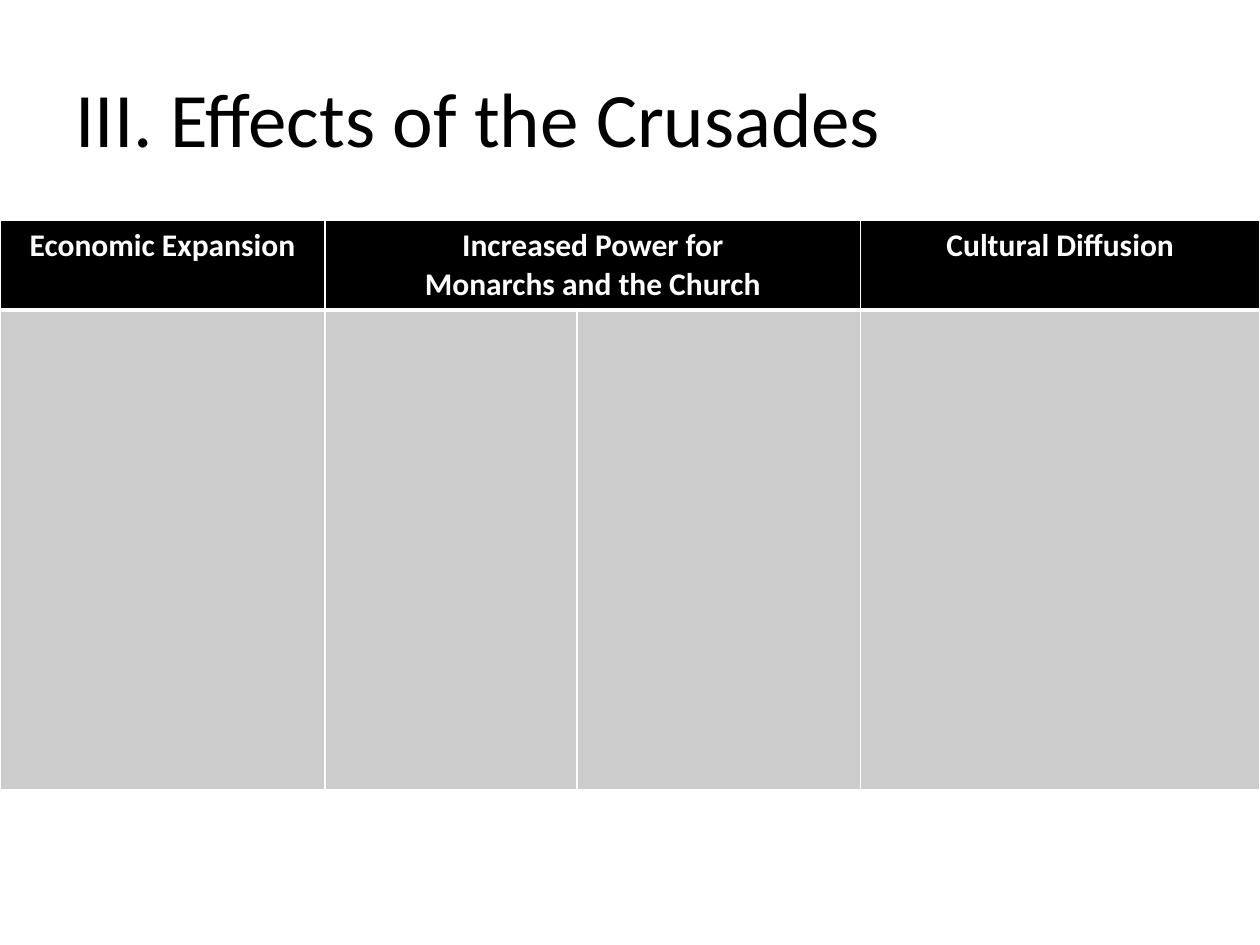
from lxml import etree
from pptx import Presentation
from pptx.dml.color import RGBColor
from pptx.enum.text import MSO_ANCHOR, PP_ALIGN
from pptx.oxml.ns import qn
from pptx.util import Inches, Pt

LEFT, CENTER = PP_ALIGN.LEFT, PP_ALIGN.CENTER
MIDDLE = MSO_ANCHOR.MIDDLE

BLACK = RGBColor(0x00, 0x00, 0x00)
WHITE = RGBColor(0xFF, 0xFF, 0xFF)
GRAY = RGBColor(0xCC, 0xCC, 0xCC)
FONT = "Calibri"

COLUMN_WIDTHS = [2.58, 2, 2.25, 3.17]
ROW_HEIGHTS = [0.7, 3.81]
HEADINGS = {
    0: "Economic Expansion",
    1: "Increased Power for\nMonarchs and the Church",
    3: "Cultural Diffusion",
}


def style_text(text_frame, size, color, align, bold=False):
    for paragraph in text_frame.paragraphs:
        paragraph.alignment = align
        for run in paragraph.runs:
            run.font.name = FONT
            run.font.size = Pt(size)
            run.font.bold = bold
            run.font.color.rgb = color


def set_borders(cell, widths):
    """Draw white cell borders; widths maps a:ln tags to points."""
    properties = cell._tc.get_or_add_tcPr()
    for position, (tag, width) in enumerate(widths.items()):
        line = etree.Element(qn(tag), w=str(Pt(width)))
        fill = etree.SubElement(line, qn("a:solidFill"))
        etree.SubElement(fill, qn("a:srgbClr"), val=str(WHITE))
        properties.insert(position, line)


def add_title(slide, left, top, width, height):
    title = slide.shapes.title
    title.left, title.top, title.width, title.height = left, top, width, height
    title.text_frame.text = "III. Effects of the Crusades"
    title.text_frame.vertical_anchor = MIDDLE
    style_text(title.text_frame, 44, BLACK, LEFT)


def add_effects_table(slide, left, top, width, height):
    effects = slide.shapes.add_table(
        len(ROW_HEIGHTS), len(COLUMN_WIDTHS), left, top, width, height
    ).table
    for column, column_width in zip(effects.columns, COLUMN_WIDTHS):
        column.width = Inches(column_width)
    for row, row_height in zip(effects.rows, ROW_HEIGHTS):
        row.height = Inches(row_height)

    # Fills and borders, with a thicker rule under the header
    for row_index, row in enumerate(effects.rows):
        is_header = row_index == 0
        for cell in row.cells:
            cell.fill.solid()
            cell.fill.fore_color.rgb = BLACK if is_header else GRAY
            set_borders(cell, {
                "a:lnL": 1,
                "a:lnR": 1,
                "a:lnT": 1 if is_header else 3,
                "a:lnB": 3 if is_header else 1,
            })

    # Headings, the middle one across two columns
    effects.cell(0, 1).merge(effects.cell(0, 2))
    for column_index, heading in HEADINGS.items():
        text_frame = effects.cell(0, column_index).text_frame
        text_frame.text = heading
        style_text(text_frame, 18, WHITE, CENTER, bold=True)


def main():
    presentation = Presentation()
    presentation.slide_width = Inches(10)
    presentation.slide_height = Inches(7.5)
    slide = presentation.slides.add_slide(presentation.slide_layouts[5])
    add_title(slide, Inches(0.5), Inches(0.3), Inches(9), Inches(1.25))
    add_effects_table(slide, Inches(0), Inches(1.75), Inches(10), Inches(4.51))
    presentation.save("out.pptx")


if __name__ == "__main__":
    main()
